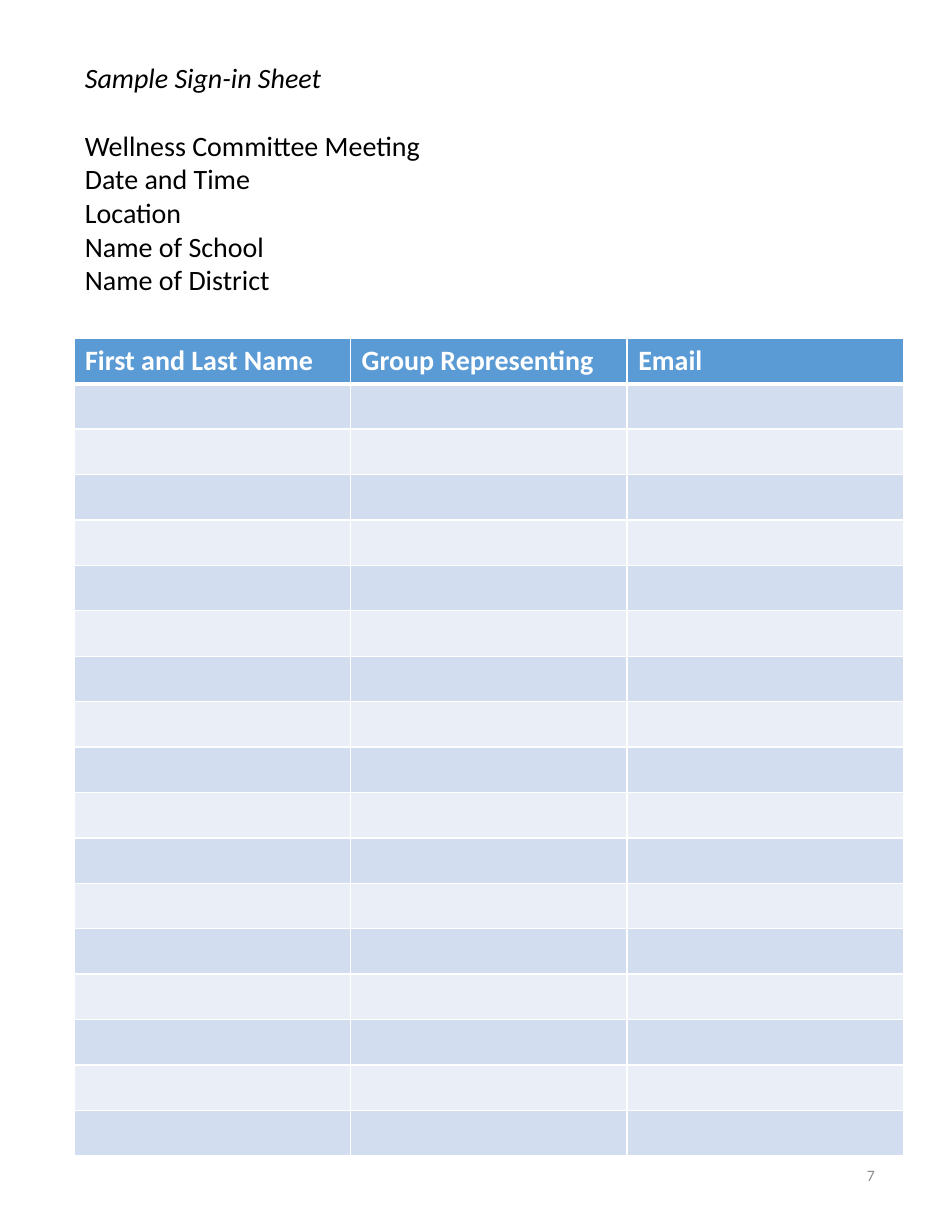
from lxml.etree import SubElement
from pptx import Presentation
from pptx.dml.color import RGBColor
from pptx.enum.text import MSO_ANCHOR, PP_ALIGN
from pptx.oxml.ns import qn
from pptx.util import Inches, Pt

COLORS = {
    "head": "5B9BD5",
    "dark": "D2DEEF",
    "light": "EAEFF7",
    "white": "FFFFFF",
    "black": "000000",
    "gray": "8C8C8C",
}


class Sheet:
    font = "Calibri"
    size = 18

    def __init__(self, slide):
        self.slide = slide

    def style(self, para, color, size=size, bold=False, italic=False):
        font = para.font
        font.name, font.size = self.font, Pt(size)
        font.bold, font.italic = bold, italic
        font.color.rgb = RGBColor.from_string(COLORS[color])

    def text(self, box, lines, color="black", size=size):
        shape = self.slide.shapes.add_textbox(*map(Inches, box))
        frame = shape.text_frame
        frame.word_wrap = True
        frame.text = "\n".join(lines)
        for para in frame.paragraphs:
            self.style(para, color, size)
        return frame

    def border(self, cell, side, width):
        props = cell._tc.get_or_add_tcPr()
        line = SubElement(props, qn(f"a:ln{side}"), w=str(Pt(width)))
        fill = SubElement(line, qn("a:solidFill"))
        SubElement(fill, qn("a:srgbClr"), val=COLORS["white"])

    def table(self, box, heads, count):
        frame = self.slide.shapes.add_table(count, len(heads), *map(Inches, box))
        table = frame.table
        for col, head in enumerate(heads):
            table.cell(0, col).text = head
        for index, row in enumerate(table.rows):
            band = "head" if index == 0 else "dark" if index % 2 else "light"
            for cell in row.cells:
                self.style(cell.text_frame.paragraphs[0], "white", bold=index == 0)
                for side in "LRTB":
                    thick = (index, side) in ((0, "B"), (1, "T"))
                    self.border(cell, side, 3 if thick else 1)
                cell.fill.solid()
                cell.fill.fore_color.rgb = RGBColor.from_string(COLORS[band])


def main():
    deck = Presentation()
    deck.slide_width, deck.slide_height = Inches(8.5), Inches(11)
    sheet = Sheet(deck.slides.add_slide(deck.slide_layouts[6]))

    page = sheet.text((6, 10.2, 1.91, 0.59), ["7"], "gray", 10.2)
    page.vertical_anchor = MSO_ANCHOR.MIDDLE
    page.paragraphs[0].alignment = PP_ALIGN.RIGHT

    heads = ["First and Last Name", "Group Representing", "Email"]
    sheet.table((0.66, 3.02, 7.41, 7.3), heads, 18)

    intro = sheet.text((0.66, 0.49, 7.26, 2.22), [
        "Sample Sign-in Sheet",
        "Wellness Committee Meeting",
        "Date and Time",
        "Location",
        "Name of School",
        "Name of District",
    ])
    title = intro.paragraphs[0]
    title.font.italic = True
    title.space_after = Pt(22)

    deck.save("out.pptx")


if __name__ == "__main__":
    main()
